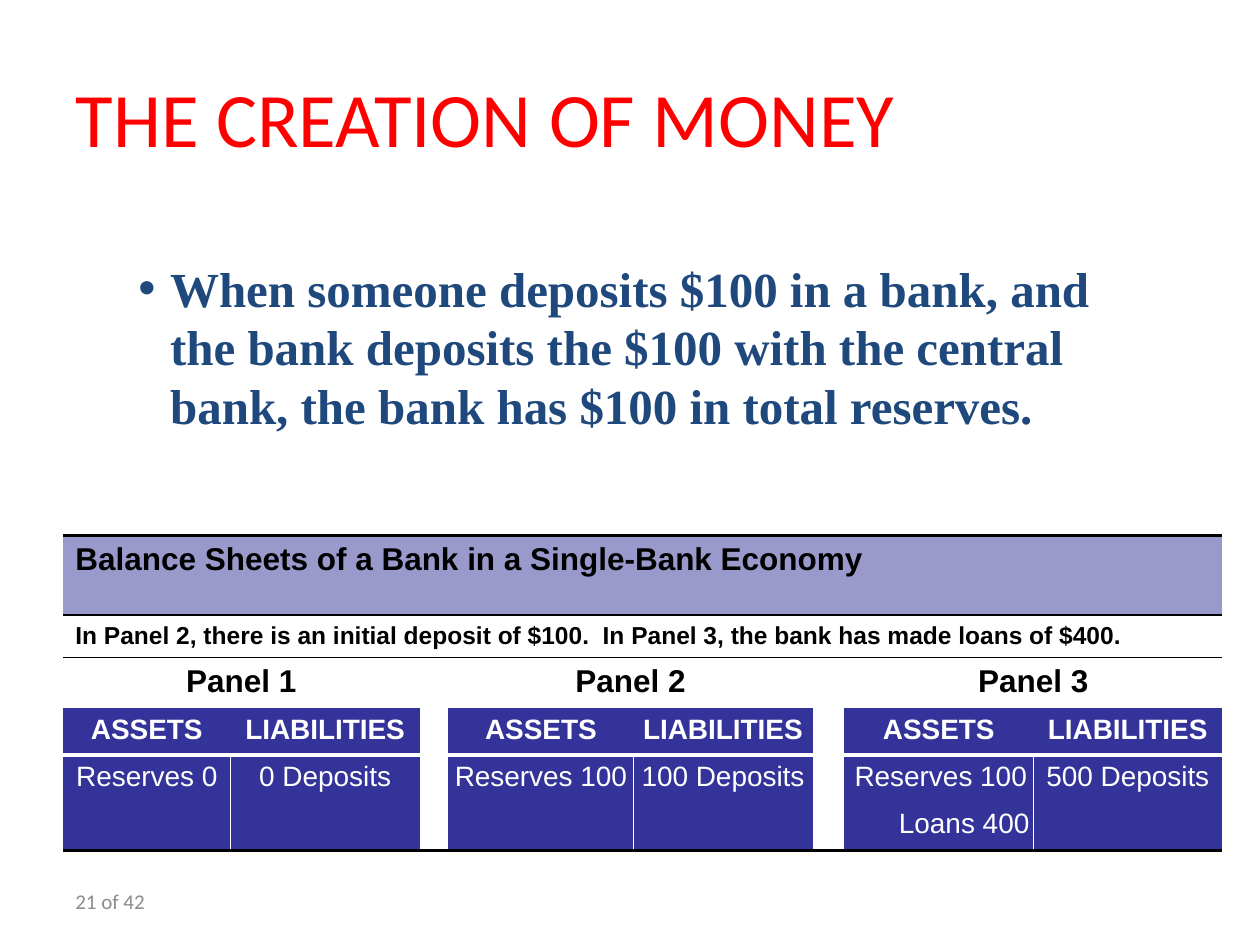
from dataclasses import dataclass
from typing import Optional

from lxml import etree
from pptx import Presentation
from pptx import util as u
from pptx.dml.color import RGBColor
from pptx.enum import text
from pptx.oxml import ns


@dataclass(frozen=True)
class Theme:
    red: str = "FF0000"
    blue: str = "1F497D"
    navy: str = "333399"
    lilac: str = "9999CC"
    grey: str = "8C8C8C"
    black: str = "000000"
    white: str = "FFFFFF"
    title: float = 44
    body: float = 28
    heading: float = 18
    entry: float = 16
    note: float = 14
    footer: float = 12
    thick: float = 2.25
    thin: float = 1


@dataclass(frozen=True)
class Panel:
    name: str
    col: int
    assets: tuple[str, ...]
    liabilities: str
    asset_insets: Optional[tuple[float, ...]] = None  # set: right-aligned, cm


T = Theme()
LEFT, CENTER, RIGHT = (text.PP_ALIGN.LEFT, text.PP_ALIGN.CENTER,
                       text.PP_ALIGN.RIGHT)
MIDDLE = text.MSO_ANCHOR.MIDDLE
MARGIN = 0.25  # usual side inset, cm

PANELS = [
    Panel("Panel 1", 0, ("Reserves 0",), "0 Deposits"),
    Panel("Panel 2", 3, ("Reserves 100",), "100 Deposits"),
    Panel("Panel 3", 6, ("Reserves 100", "Loans 400"), "500 Deposits",
          (0.13, 0.08)),
]
GAPS = (2, 5)
COL_WIDTHS = (3.38, 3.81, 0.58, 3.73, 3.61, 0.64, 3.81, 3.81)
ROW_HEIGHTS = (1.6, 0.84, 1.02, 0.94, 0.94, 0.99)
HEADING, NOTE, NAMES, SIDES, FIRST, LAST = range(6)


def add_run(p, words: str, size: float, color: str, font: str,
            bold: bool = False) -> None:
    r = p.add_run()
    r.text = words
    r.font.size, r.font.name, r.font.bold = u.Pt(size), font, bold
    r.font.color.rgb = RGBColor.from_string(color)


def add_box(s, left: float, top: float, width: float, height: float):
    tf = s.shapes.add_textbox(u.Cm(left), u.Cm(top), u.Cm(width),
                              u.Cm(height)).text_frame
    tf.word_wrap = True
    return tf


def add_bullet(p, indent: float) -> None:
    pPr = p._p.get_or_add_pPr()
    pPr.set("marL", str(u.Cm(indent)))
    pPr.set("indent", str(-u.Cm(indent)))
    etree.SubElement(pPr, ns.qn("a:buFont")).set("typeface", "Arial")
    etree.SubElement(pPr, ns.qn("a:buChar")).set("char", "•")


def write_cell(cell, words: str, size: float, color: str, bold: bool = True,
               align=CENTER, left: float = 0, right: float = 0) -> None:
    cell.margin_left, cell.margin_right = u.Cm(left), u.Cm(right)
    cell.margin_top = cell.margin_bottom = u.Cm(0.13)
    p = cell.text_frame.paragraphs[0]
    p.alignment = align
    add_run(p, words, size, color, "Arial", bold)


def style_cell(cell, fill: str,
               borders: dict[str, tuple[str, float]]) -> None:
    """Fill a cell and draw the given sides (L, R, T, B); others stay bare."""
    cell.margin_left = cell.margin_right = 0
    cell.margin_top = cell.margin_bottom = 0
    cell.fill.solid()
    cell.fill.fore_color.rgb = RGBColor.from_string(fill)
    tcPr = cell._tc.get_or_add_tcPr()
    for i, side in enumerate("LRTB"):
        ln = etree.Element(ns.qn(f"a:ln{side}"))
        if side in borders:
            color, width = borders[side]
            ln.set("w", str(u.Pt(width)))
            solid = etree.SubElement(ln, ns.qn("a:solidFill"))
            etree.SubElement(solid, ns.qn("a:srgbClr")).set("val", color)
        else:
            etree.SubElement(ln, ns.qn("a:noFill"))
        tcPr.insert(i, ln)


def cell_borders(row: int, col: int) -> dict[str, tuple[str, float]]:
    b = {}
    if row <= NAMES:
        b["T"] = (T.black, T.thick if row == HEADING else T.thin)
    if row < NAMES:
        b["B"] = (T.black, T.thin)
    if row == LAST:
        b["B"] = (T.black, T.thick)
    if col not in GAPS:
        if row == SIDES:
            b["B"] = (T.white, T.thick)
        if row == FIRST:
            b["T"] = (T.white, T.thick)
        if row >= FIRST:
            is_asset = col in [panel.col for panel in PANELS]
            b["R" if is_asset else "L"] = (T.white, T.thin)
    return b


def cell_fill(row: int, col: int) -> str:
    if row == HEADING:
        return T.lilac
    return T.navy if row >= SIDES and col not in GAPS else T.white


def add_panel(table, panel: Panel) -> None:
    a, b = panel.col, panel.col + 1
    name = table.cell(NAMES, a)
    name.merge(table.cell(NAMES, b))
    write_cell(name, panel.name, T.heading, T.black, left=MARGIN, right=MARGIN)
    write_cell(table.cell(SIDES, a), "ASSETS", T.entry, T.white)
    write_cell(table.cell(SIDES, b), "LIABILITIES", T.entry, T.white)
    for i, words in enumerate(panel.assets):
        inset = panel.asset_insets[i] if panel.asset_insets else 0
        write_cell(table.cell(FIRST + i, a), words, T.entry, T.white, False,
                   RIGHT if panel.asset_insets else CENTER, right=inset)
    write_cell(table.cell(FIRST, b), panel.liabilities, T.entry, T.white,
               False)


def add_balance_sheets(s) -> None:
    table = s.shapes.add_table(
        len(ROW_HEIGHTS), len(COL_WIDTHS), u.Cm(1.27), u.Cm(10.8),
        u.Cm(sum(COL_WIDTHS)), u.Cm(sum(ROW_HEIGHTS))).table
    table.first_row = table.horz_banding = False
    for column, width in zip(table.columns, COL_WIDTHS):
        column.width = u.Cm(width)
    for row, height in zip(table.rows, ROW_HEIGHTS):
        row.height = u.Cm(height)
    for row in range(len(ROW_HEIGHTS)):
        for col in range(len(COL_WIDTHS)):
            style_cell(table.cell(row, col), cell_fill(row, col),
                       cell_borders(row, col))

    # Full-width heading and note
    banners = [
        ("Balance Sheets of a Bank in a Single-Bank Economy", T.heading),
        ("In Panel 2, there is an initial deposit of $100.  "
         "In Panel 3, the bank has made loans of $400.", T.note),
    ]
    for row, (words, size) in enumerate(banners):
        cell = table.cell(row, 0)
        cell.merge(table.cell(row, len(COL_WIDTHS) - 1))
        write_cell(cell, words, size, T.black, align=LEFT,
                   left=MARGIN, right=MARGIN)
    table.cell(NOTE, 0).vertical_anchor = MIDDLE

    for panel in PANELS:
        add_panel(table, panel)


def main() -> None:
    prs = Presentation()
    prs.slide_width, prs.slide_height = u.Cm(25.4), u.Cm(19.05)
    s = prs.slides.add_slide(prs.slide_layouts[5])

    # Title
    sp = s.shapes.title
    sp.left, sp.top, sp.width, sp.height = map(u.Cm, (1.27, 0.76, 22.86, 3.18))
    tf = sp.text_frame
    tf.vertical_anchor = MIDDLE
    p = tf.paragraphs[0]
    p.alignment = LEFT
    add_run(p, "THE CREATION OF MONEY", T.title, T.red, "Calibri")

    # Statement
    p = add_box(s, 2.54, 5.08, 20.32, 4.65).paragraphs[0]
    p.space_before = u.Pt(5.6)
    add_bullet(p, 0.64)
    add_run(p, "When someone deposits $100 in a bank, and the bank deposits "
            "the $100 with the central bank, the bank has $100 in total "
            "reserves.", T.body, T.blue, "Times New Roman", True)

    add_balance_sheets(s)

    # Page count
    tf = add_box(s, 1.27, 17.65, 5.92, 1.02)
    tf.vertical_anchor = MIDDLE
    add_run(tf.paragraphs[0], "21 of 42", T.footer, T.grey, "Calibri")

    prs.save("out.pptx")


if __name__ == "__main__":
    main()
